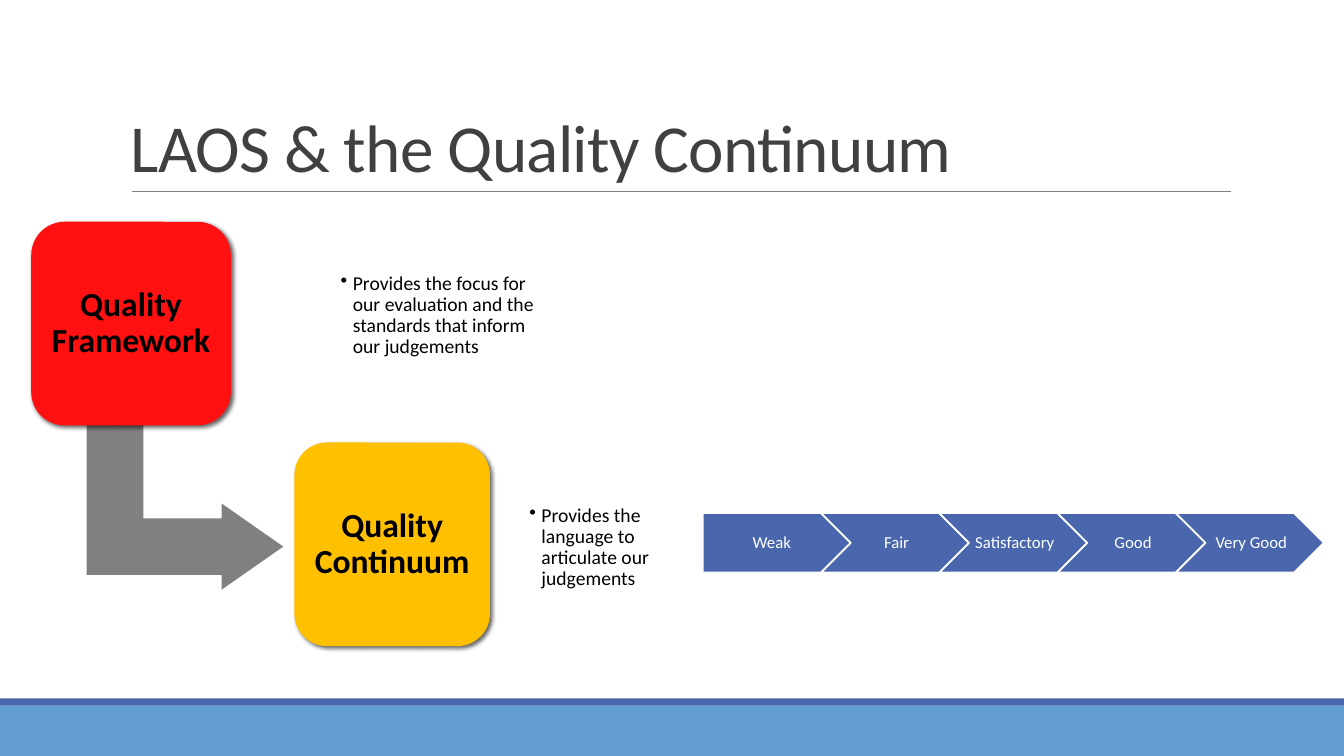
from pptx import Presentation
from pptx.dml.color import RGBColor
from pptx.enum.shapes import MSO_CONNECTOR, MSO_SHAPE
from pptx.enum.text import MSO_ANCHOR, PP_ALIGN
from pptx.oxml.ns import qn
from pptx.util import Emu, Inches, Pt
from lxml import etree

RECTANGLE = MSO_SHAPE.RECTANGLE
ROUNDED = MSO_SHAPE.ROUNDED_RECTANGLE
BENT_ARROW = MSO_SHAPE.BENT_UP_ARROW
PENTAGON = MSO_SHAPE.PENTAGON
CHEVRON = MSO_SHAPE.CHEVRON
STRAIGHT = MSO_CONNECTOR.STRAIGHT
MIDDLE, BOTTOM = MSO_ANCHOR.MIDDLE, MSO_ANCHOR.BOTTOM
LEFT, CENTER = PP_ALIGN.LEFT, PP_ALIGN.CENTER

FONT = "Calibri"
SKY = RGBColor(0x62, 0x9D, 0xD1)
INDIGO = RGBColor(0x4A, 0x66, 0xAC)
GRAY = RGBColor(0x80, 0x80, 0x80)
CHARCOAL = RGBColor(0x40, 0x40, 0x40)
RED = RGBColor(0xFF, 0x11, 0x11)
AMBER = RGBColor(0xFF, 0xC0, 0x00)
BLACK = RGBColor(0x00, 0x00, 0x00)
WHITE = RGBColor(0xFF, 0xFF, 0xFF)

WIDTH, HEIGHT = 13.33, 7.5
RATINGS = ["Weak", "Fair", "Satisfactory", "Good", "Very Good"]


def lengths(box):
    return [Inches(value) for value in box]


def write(shape, text, size=12, color=BLACK, bold=False, align=CENTER,
          anchor=MIDDLE, insets=(0.1, 0.1, 0.1, 0.1), leading=0.9,
          spacing=0, bullet=False):
    frame = shape.text_frame
    frame.word_wrap = True
    frame.vertical_anchor = anchor
    (frame.margin_left, frame.margin_top,
     frame.margin_right, frame.margin_bottom) = lengths(insets)
    para = frame.paragraphs[0]
    para.alignment = align
    para.line_spacing = leading
    span = para.add_run()
    span.text = text
    font = span.font
    font.name, font.size, font.bold = FONT, Pt(size), bold
    font.color.rgb = color
    if spacing:
        font._element.set("spc", str(int(spacing * 100)))
    if bullet:
        properties = para._p.get_or_add_pPr()
        properties.set("marL", str(Inches(0.12)))
        properties.set("indent", str(-Inches(0.12)))
        etree.SubElement(properties, qn("a:buChar"), char="•")


def add_block(page, kind, box, fill, line=None):
    shape = page.shapes.add_shape(kind, *lengths(box))
    shape.shadow.inherit = False
    shape.fill.solid()
    shape.fill.fore_color.rgb = fill
    if line is None:
        shape.line.fill.background()
    else:
        shape.line.color.rgb = line
        shape.line.width = Pt(1.25)
    return shape


def add_text(page, box, text, **style):
    write(page.shapes.add_textbox(*lengths(box)), text, **style)


def cast_shadow(shape):
    effects = shape._element.spPr.find(qn("a:effectLst"))
    shadow = etree.SubElement(
        effects, qn("a:outerShdw"), blurRad=str(Pt(3)), dist=str(Pt(2)),
        dir=str(45 * 60000), algn="ctr", rotWithShape="0")
    color = etree.SubElement(shadow, qn("a:srgbClr"), val=str(BLACK))
    etree.SubElement(color, qn("a:alpha"), val="60000")


def add_footer(page, box):
    left, top, width, height = box
    stripe = 0.07
    add_block(page, RECTANGLE, (left, top + stripe, width, height - stripe), SKY)
    add_block(page, RECTANGLE, (left, top, width, stripe), INDIGO)


def add_title(page, box, text):
    left, top, width, height = box
    start, base = left + 0.11, top + height
    rule = page.shapes.add_connector(
        STRAIGHT, *lengths((start, base, start + 10.9, base)))
    rule.line.color.rgb = GRAY
    rule.line.width = Pt(0.5)
    etree.SubElement(rule._element.spPr, qn("a:effectLst"))
    add_text(page, box, text, size=48, color=CHARCOAL, align=LEFT,
             anchor=BOTTOM, insets=(0.1, 0.05, 0.1, 0.05), leading=0.85,
             spacing=-0.5)


def add_turn(page, box):
    arrow = add_block(page, BENT_ARROW, box, GRAY)
    arrow.rotation = 90
    for index, share in enumerate((0.328, 0.25, 0.358)):
        arrow.adjustments[index] = share


def add_step(page, box, heading, fill, note_box, note):
    card = add_block(page, ROUNDED, box, fill)
    card.adjustments[0] = 0.167
    cast_shadow(card)
    write(card, heading, size=24, bold=True)
    add_text(page, note_box, note, size=14, align=LEFT, insets=(0.06,) * 4,
             bullet=True)


def add_scale(page, box, labels):
    left, top, width, height = box
    overlap = height / 2
    step = (width - overlap) / len(labels)
    for index, label in enumerate(labels):
        first = index == 0
        link = add_block(page, CHEVRON if index else PENTAGON,
                         (left + index * step, top, step + overlap, height),
                         INDIGO, WHITE)
        write(link, label, color=WHITE,
              insets=(0.07 if first else 0.05, 0.04, 0.02, 0.04))


def add_continuum_page(deck):
    page = deck.slides.add_slide(deck.slide_layouts[6])
    add_footer(page, (0, 6.93, WIDTH, HEIGHT - 6.93))
    add_title(page, (1.2, 0.31, 11, 1.59), "LAOS & the Quality Continuum")
    add_turn(page, (0.98, 4.02, 1.71, 1.95))
    add_step(page, (0.31, 2.2, 1.98, 2.02), "Quality Framework", RED,
             (3.32, 2.03, 2.27, 2.2),
             "Provides the focus for our evaluation and the standards "
             "that inform our judgements")
    add_step(page, (2.92, 4.39, 1.94, 2.02), "Quality Continuum", AMBER,
             (5.19, 4.62, 1.67, 1.63),
             "Provides the language to articulate our judgements")
    add_scale(page, (6.97, 5.09, 6.16, 0.59), RATINGS)


def main():
    deck = Presentation()
    deck.slide_width, deck.slide_height = Inches(WIDTH), Inches(HEIGHT)
    add_continuum_page(deck)
    deck.save("out.pptx")


if __name__ == "__main__":
    main()
